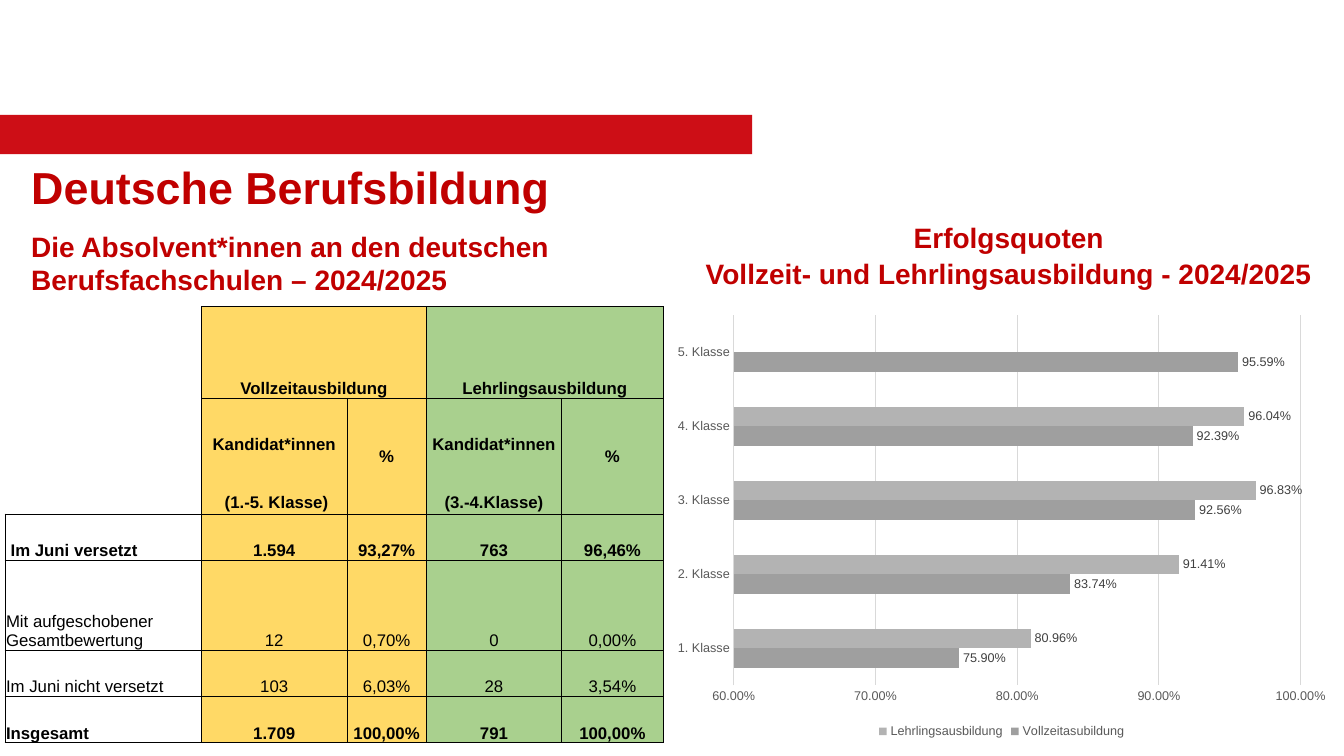
from lxml import etree
from pptx import Presentation
from pptx.chart.data import CategoryChartData
from pptx.dml.color import RGBColor
from pptx.enum.chart import (XL_CHART_TYPE, XL_LABEL_POSITION,
                             XL_LEGEND_POSITION, XL_TICK_MARK)
from pptx.enum.shapes import MSO_SHAPE
from pptx.enum.text import MSO_ANCHOR, PP_ALIGN
from pptx.oxml.ns import qn
from pptx.util import Inches, Pt

FONT = "Arial"
RED, BLACK, GRID, GREY = "C00000", "000000", "D9D9D9", "595959"
YELLOW, GREEN = "FFD966", "A9D08E"
COL_FILLS = [None, YELLOW, YELLOW, GREEN, GREEN]
COL_WIDTHS = [1.95, 1.44, 0.79, 1.34, 1.01]
ROW_HEIGHTS = [0.91, 0.91, 0.24, 0.46, 0.89, 0.46, 0.46]
ROWS = [
    ["", "Vollzeitausbildung", "", "Lehrlingsausbildung", ""],
    ["", "Kandidat*innen", "%", "Kandidat*innen", "%"],
    ["", " (1.-5. Klasse)", "", "(3.-4.Klasse)", ""],
    [" Im Juni versetzt", "1.594", "93,27%", "763", "96,46%"],
    ["Mit aufgeschobener Gesamtbewertung", "12", "0,70%", "0", "0,00%"],
    ["Im Juni nicht versetzt", "103", "6,03%", "28", "3,54%"],
    ["Insgesamt", "1.709", "100,00%", "791", "100,00%"],
]
PLAIN_ROWS = (4, 5)
MERGES = [(0, 1, 0, 2), (0, 3, 0, 4), (1, 0, 2, 0), (1, 2, 2, 2), (1, 4, 2, 4)]
# Cells that are not framed on all four sides
SIDES = {(0, 0): "R", (1, 0): "RB", (2, 0): "RB",
         (1, 1): "LRT", (1, 3): "LRT", (2, 1): "LRB", (2, 3): "LRB"}
SERIES = [
    ("Vollzeitasubildung", "9F9F9F", [0.759, 0.8374, 0.9256, 0.9239, 0.9559]),
    ("Lehrlingsausbildung", "B3B3B3", [0.8096, 0.9141, 0.9683, 0.9604, None]),
]


def rgb(color):
    return RGBColor.from_string(color)


def set_font(font, size, color, bold=False):
    font.name, font.size, font.bold = FONT, Pt(size), bold
    font.color.rgb = rgb(color)


def add_heading(sp, box, lines, size, align=PP_ALIGN.LEFT, spacing=1.0):
    sp.left, sp.top, sp.width, sp.height = [Inches(v) for v in box]
    tf = sp.text_frame
    tf.word_wrap = True
    tf.vertical_anchor = MSO_ANCHOR.MIDDLE
    for i, line in enumerate(lines):
        p = tf.add_paragraph() if i else tf.paragraphs[0]
        p.alignment, p.line_spacing = align, spacing
        p.space_before = Pt(0)
        r = p.add_run()
        r.text = line
        set_font(r.font, size, RED, True)


def add_text(slide, box, *args):
    sp = slide.shapes.add_textbox(*[Inches(v) for v in box])
    add_heading(sp, box, *args)


def add_banner(slide, box):
    sp = slide.shapes.add_shape(MSO_SHAPE.RECTANGLE, *[Inches(v) for v in box])
    sp.shadow.inherit = False
    sp.fill.solid()
    sp.fill.fore_color.rgb = rgb("CD0E16")
    sp.line.fill.background()


def set_borders(cell, sides):
    tcPr = cell._tc.get_or_add_tcPr()
    for side in "LRTB":
        ln = etree.SubElement(tcPr, qn("a:ln" + side), w=str(Pt(0.5)))
        if side in sides:
            fill = etree.SubElement(ln, qn("a:solidFill"))
            etree.SubElement(fill, qn("a:srgbClr"), val=BLACK)
        else:
            etree.SubElement(ln, qn("a:noFill"))


def fill_cell(cell, row, col):
    set_borders(cell, SIDES.get((row, col), "LRTB"))
    if COL_FILLS[col]:
        cell.fill.solid()
        cell.fill.fore_color.rgb = rgb(COL_FILLS[col])
    else:
        cell.fill.background()
    cell.margin_left = cell.margin_right = cell.margin_top = Inches(0.01)
    cell.margin_bottom = 0
    cell.vertical_anchor = MSO_ANCHOR.MIDDLE if row in (1, 2) else MSO_ANCHOR.BOTTOM
    p = cell.text_frame.paragraphs[0]
    p.alignment = PP_ALIGN.CENTER if col else PP_ALIGN.LEFT
    if ROWS[row][col]:
        r = p.add_run()
        r.text = ROWS[row][col]
        set_font(r.font, 12, BLACK, row not in PLAIN_ROWS)
    else:
        # Empty cells must not stretch their row
        p._p.get_or_add_endParaRPr().set("sz", "1200")


def add_results_table(slide, box):
    frame = slide.shapes.add_table(len(ROWS), len(COL_WIDTHS),
                                   *[Inches(v) for v in box])
    table = frame.table
    table.first_row = table.horz_banding = False
    for column, width in zip(table.columns, COL_WIDTHS):
        column.width = Inches(width)
    for row, height in zip(table.rows, ROW_HEIGHTS):
        row.height = Inches(height)
    for i in range(len(ROWS)):
        for j in range(len(COL_WIDTHS)):
            fill_cell(table.cell(i, j), i, j)
    for top, left, bottom, right in MERGES:
        table.cell(top, left).merge(table.cell(bottom, right))


def add_rate_chart(slide, box):
    data = CategoryChartData(number_format="0.00%")
    data.categories = [f"{n}. Klasse" for n in range(1, 6)]
    for name, _, values in SERIES:
        data.add_series(name, values)
    chart = slide.shapes.add_chart(XL_CHART_TYPE.BAR_CLUSTERED,
                                   *[Inches(v) for v in box], data).chart
    chart.has_title = False
    set_font(chart.font, 10, BLACK)

    # Axes
    for axis in (chart.category_axis, chart.value_axis):
        axis.major_tick_mark = axis.minor_tick_mark = XL_TICK_MARK.NONE
        set_font(axis.tick_labels.font, 9, GREY)
    cat, val = chart.category_axis, chart.value_axis
    val.minimum_scale, val.maximum_scale, val.major_unit = 0.6, 1, 0.1
    val.tick_labels.number_format = "0.00%"
    val.tick_labels.number_format_is_linked = False
    val.format.line.fill.background()
    val.has_major_gridlines = True
    for line in (cat.format.line, val.major_gridlines.format.line):
        line.color.rgb = rgb(GRID)
        line.width = Pt(0.75)

    # Bars and their values
    plot = chart.plots[0]
    plot.gap_width, plot.overlap, plot.vary_by_categories = 182, 0, False
    for series, (_, color, _) in zip(plot.series, SERIES):
        series.format.fill.solid()
        series.format.fill.fore_color.rgb = rgb(color)
        labels = series.data_labels
        labels.show_value = True
        labels.number_format = "0.00%"
        labels.number_format_is_linked = False
        labels.position = XL_LABEL_POSITION.OUTSIDE_END
        set_font(labels.font, 9, "404040")

    # Legend
    chart.has_legend = True
    chart.legend.position = XL_LEGEND_POSITION.BOTTOM
    chart.legend.include_in_layout = False
    set_font(chart.legend.font, 9, GREY)


def main():
    prs = Presentation()
    prs.slide_width, prs.slide_height = Inches(13.33), Inches(7.5)
    slide = prs.slides.add_slide(prs.slide_layouts[5])
    add_banner(slide, (-0.1, 1.14, 7.56, 0.39))
    add_heading(slide.shapes.title, (0.21, 1.62, 5.75, 0.47),
                ["Deutsche Berufsbildung"], 32)
    add_text(slide, (0.21, 2.41, 5.75, 0.39),
             ["Die Absolvent*innen an den deutschen Berufsfachschulen – 2024/2025"], 20)
    add_results_table(slide, (0.05, 3.04, 6.53, 4.33))
    add_rate_chart(slide, (6.59, 3.04, 6.69, 4.33))
    add_text(slide, (6.88, 2.33, 6.25, 0.39),
             ["Erfolgsquoten", "Vollzeit- und Lehrlingsausbildung - 2024/2025"],
             20, PP_ALIGN.CENTER, 1.07)
    prs.save("out.pptx")


if __name__ == "__main__":
    main()
